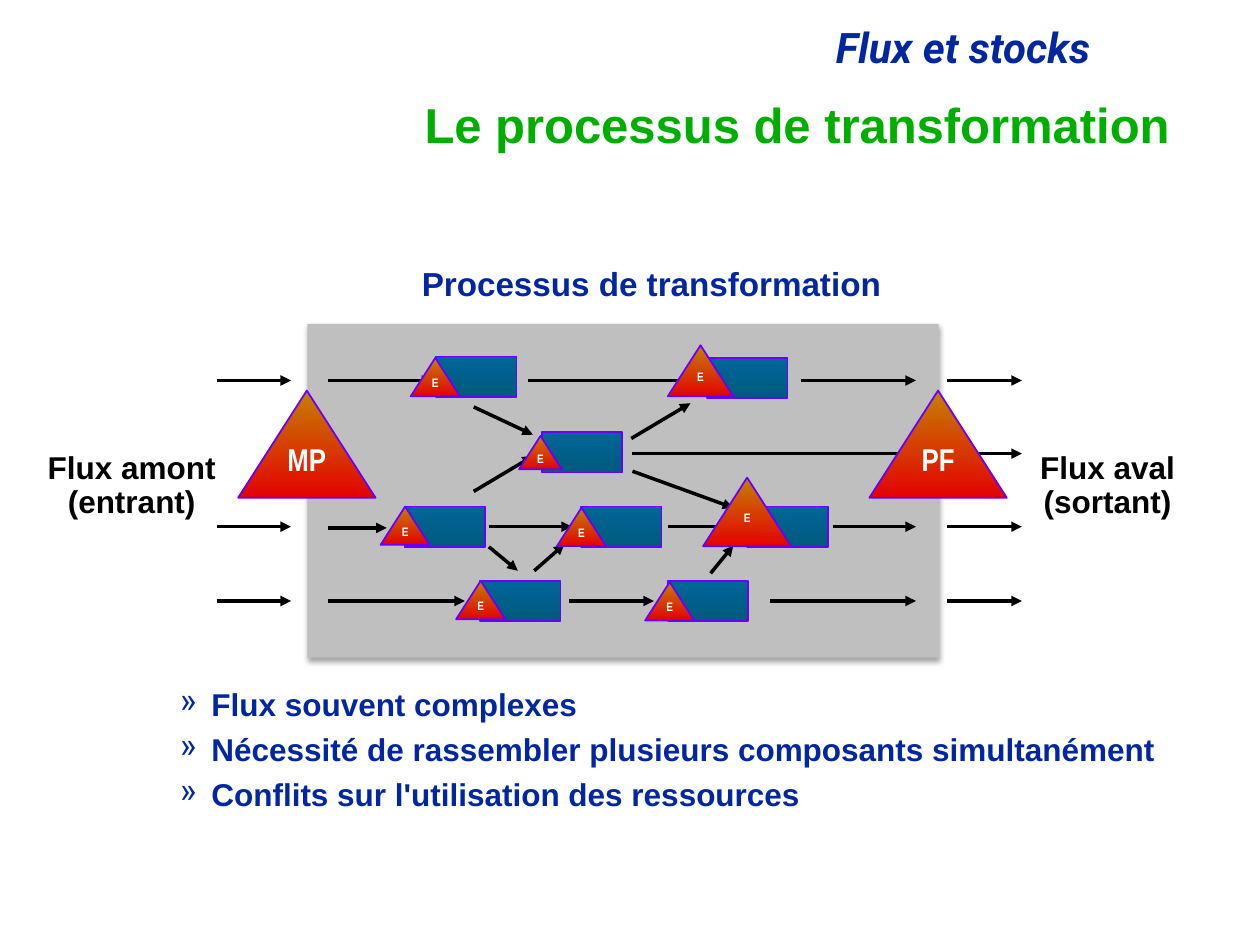
from lxml import etree
from pptx import Presentation
from pptx.dml.color import RGBColor
from pptx.enum.shapes import MSO_CONNECTOR, MSO_SHAPE
from pptx.enum.text import MSO_ANCHOR, PP_ALIGN
from pptx.oxml.ns import qn
from pptx.util import Inches, Pt

RECTANGLE, TRIANGLE = MSO_SHAPE.RECTANGLE, MSO_SHAPE.ISOSCELES_TRIANGLE
STRAIGHT = MSO_CONNECTOR.STRAIGHT
TOP, MIDDLE = MSO_ANCHOR.TOP, MSO_ANCHOR.MIDDLE
LEFT, CENTER, RIGHT = PP_ALIGN.LEFT, PP_ALIGN.CENTER, PP_ALIGN.RIGHT

COLORS = {
    "navy": "00279F", "green": "00AE00", "black": "000000", "white": "FFFFFF",
    "panel": "BFBFBF", "outline": "6600FF",
    "machine_top": "006699", "machine_bottom": "005A7C",
    "stock_top": "C68000", "stock_bottom": "E30202",
}

MACHINE_SIZE = (0.64, 0.32)
MACHINES = [(3.46, 2.83), (5.61, 2.84), (4.3, 3.43), (3.21, 4.02),
            (4.61, 4.02), (5.93, 4.02), (3.81, 4.61), (5.3, 4.61)]

# Left, top and width of each in-process stock
STOCKS = [(3.26, 2.84, 0.39), (5.3, 2.74, 0.52), (5.58, 3.79, 0.7),
          (4.12, 3.46, 0.34), (4.42, 4.03, 0.39), (5.12, 4.62, 0.39),
          (3.02, 4.02, 0.39), (3.62, 4.61, 0.39)]
MAIN_STOCKS = [("MP", 1.89), ("PF", 6.9)]
STOCK_RATIO = 0.78

INFLOW, OUTFLOW = (1.72, 2.31), (7.52, 8.11)
# Height of each row: start and end of its horizontal arrows
ROW_ARROWS = {
    3.02: [INFLOW, (2.6, 3.43), (4.19, 5.52), (6.36, 7.27), OUTFLOW],
    3.6: [(5.02, 7.27), OUTFLOW],
    4.18: [INFLOW, (3.88, 4.54), (5.3, 5.89), (6.61, 7.27), OUTFLOW],
    4.19: [(2.6, 3.07)],
    4.77: [INFLOW, (2.6, 3.69), (4.52, 5.19), (6.11, 7.27), OUTFLOW],
}
CROSS_ARROWS = [
    (3.76, 3.23, 4.23, 3.45), (5.01, 3.48, 5.48, 3.2),
    (5.02, 3.74, 5.82, 4.03), (3.76, 3.9, 4.23, 3.62),
    (4.24, 4.53, 4.48, 4.32), (3.88, 4.34, 4.11, 4.53),
    (5.64, 4.55, 5.82, 4.33),
]


def rgb(name):
    return RGBColor.from_string(COLORS[name])


class SlideBuilder:
    """Holds the text and line style and the slide being filled."""

    font_name = "Arial"
    line_spacing = 0.9
    arrow_width = Pt(2)
    outline_width = Pt(1)

    def __init__(self, slide):
        self.slide = slide

    def fill_text(self, frame, lines, size, color, align, font=None, italic=False):
        for index, line in enumerate(lines):
            paragraph = frame.paragraphs[0] if index == 0 else frame.add_paragraph()
            paragraph.text = line
            paragraph.alignment = align
            paragraph.line_spacing = self.line_spacing
            style = {"name": font or self.font_name, "size": Pt(size),
                     "bold": True, "italic": italic}
            run_font = paragraph.runs[0].font
            for key, value in style.items():
                setattr(run_font, key, value)
            run_font.color.rgb = rgb(color)

    def text(self, box, lines, size, color, align=LEFT, anchor=TOP, wrap=True, **style):
        shape = self.slide.shapes.add_textbox(*map(Inches, box))
        frame = shape.text_frame
        frame.word_wrap = wrap
        frame.vertical_anchor = anchor
        self.fill_text(frame, lines, size, color, align, **style)
        return shape

    def bullets(self, box, lines, size, color):
        frame = self.text(box, lines, size, color).text_frame
        for paragraph in frame.paragraphs:
            paragraph.space_before = Pt(6.2)
            properties = paragraph._p.get_or_add_pPr()
            properties.set("marL", str(Inches(1.25)))
            properties.set("indent", str(Inches(-0.25)))
            etree.SubElement(properties, qn("a:buChar"), char="»")

    def shape(self, kind, box):
        shape = self.slide.shapes.add_shape(kind, *map(Inches, box))
        shape.shadow.inherit = False
        return shape

    def panel(self, box):
        """Grey area with a soft shadow below it."""
        shape = self.shape(RECTANGLE, box)
        shape.fill.solid()
        shape.fill.fore_color.rgb = rgb("panel")
        shape.line.fill.background()
        effects = shape._element.spPr.find(qn("a:effectLst"))
        shadow = etree.SubElement(
            effects, qn("a:outerShdw"), blurRad=str(Pt(3.1)), dist=str(Pt(1.8)),
            dir="5400000", algn="ctr", rotWithShape="0")
        color = etree.SubElement(shadow, qn("a:srgbClr"), val=COLORS["black"])
        etree.SubElement(color, qn("a:alpha"), val="35000")

    def gradient_shape(self, kind, box, name):
        shape = self.shape(kind, box)
        shape.fill.gradient()
        shape.fill.gradient_angle = 270
        for stop, end in zip(shape.fill.gradient_stops, ("top", "bottom")):
            stop.color.rgb = rgb(f"{name}_{end}")
        shape.line.color.rgb = rgb("outline")
        shape.line.width = self.outline_width
        return shape

    def machine(self, left, top):
        self.gradient_shape(RECTANGLE, (left, top, *MACHINE_SIZE), "machine")

    def stock(self, left, top, width, label, size):
        box = (left, top, width, width * STOCK_RATIO)
        frame = self.gradient_shape(TRIANGLE, box, "stock").text_frame
        for side in ("left", "top", "right", "bottom"):
            setattr(frame, f"margin_{side}", 0)
        frame.vertical_anchor = TOP
        self.fill_text(frame, [label], size, "white", CENTER, font="Arial Narrow")

    def arrow(self, *ends):
        connector = self.slide.shapes.add_connector(STRAIGHT, *map(Inches, ends))
        connector.line.color.rgb = rgb("black")
        connector.line.width = self.arrow_width
        etree.SubElement(connector.line._get_or_add_ln(), qn("a:tailEnd"), type="triangle")
        etree.SubElement(connector._element.spPr, qn("a:effectLst"))


def main():
    presentation = Presentation()
    presentation.slide_width, presentation.slide_height = Inches(10), Inches(7.5)
    builder = SlideBuilder(presentation.slides.add_slide(presentation.slide_layouts[6]))

    builder.text((1.17, 0.17, 7.58, 0.46), ["Flux et stocks"], 24, "navy", RIGHT,
                 font="Roboto", italic=True)
    builder.text((1.46, 0.76, 7.92, 0.5), ["Le processus de transformation"],
                 28, "green", RIGHT, MIDDLE)
    builder.bullets((0.33, 5.42, 9.33, 1.08), [
        "Flux souvent complexes",
        "Nécessité de rassembler plusieurs composants simultanément",
        "Conflits sur l'utilisation des ressources",
    ], 18, "navy")
    builder.text((3.25, 2.08, 3.86, 0.38), ["Processus de transformation"],
                 19, "navy", wrap=False)

    builder.panel((2.44, 2.57, 5.01, 2.65))
    for position in MACHINES:
        builder.machine(*position)
    for height, spans in ROW_ARROWS.items():
        for start, end in spans:
            builder.arrow(start, height, end, height)
    for ends in CROSS_ARROWS:
        builder.arrow(*ends)

    builder.text((0.27, 3.54, 1.55, 0.64), ["Flux amont", "(entrant)"],
                 18, "black", CENTER, wrap=False)
    builder.text((8.15, 3.54, 1.28, 0.64), ["Flux aval", "(sortant)"],
                 18, "black", CENTER, wrap=False)
    for stock in STOCKS:
        builder.stock(*stock, "E", 7)
    for label, left in MAIN_STOCKS:
        builder.stock(left, 3.1, 1.09, label, 18)

    presentation.save("out.pptx")


if __name__ == "__main__":
    main()
